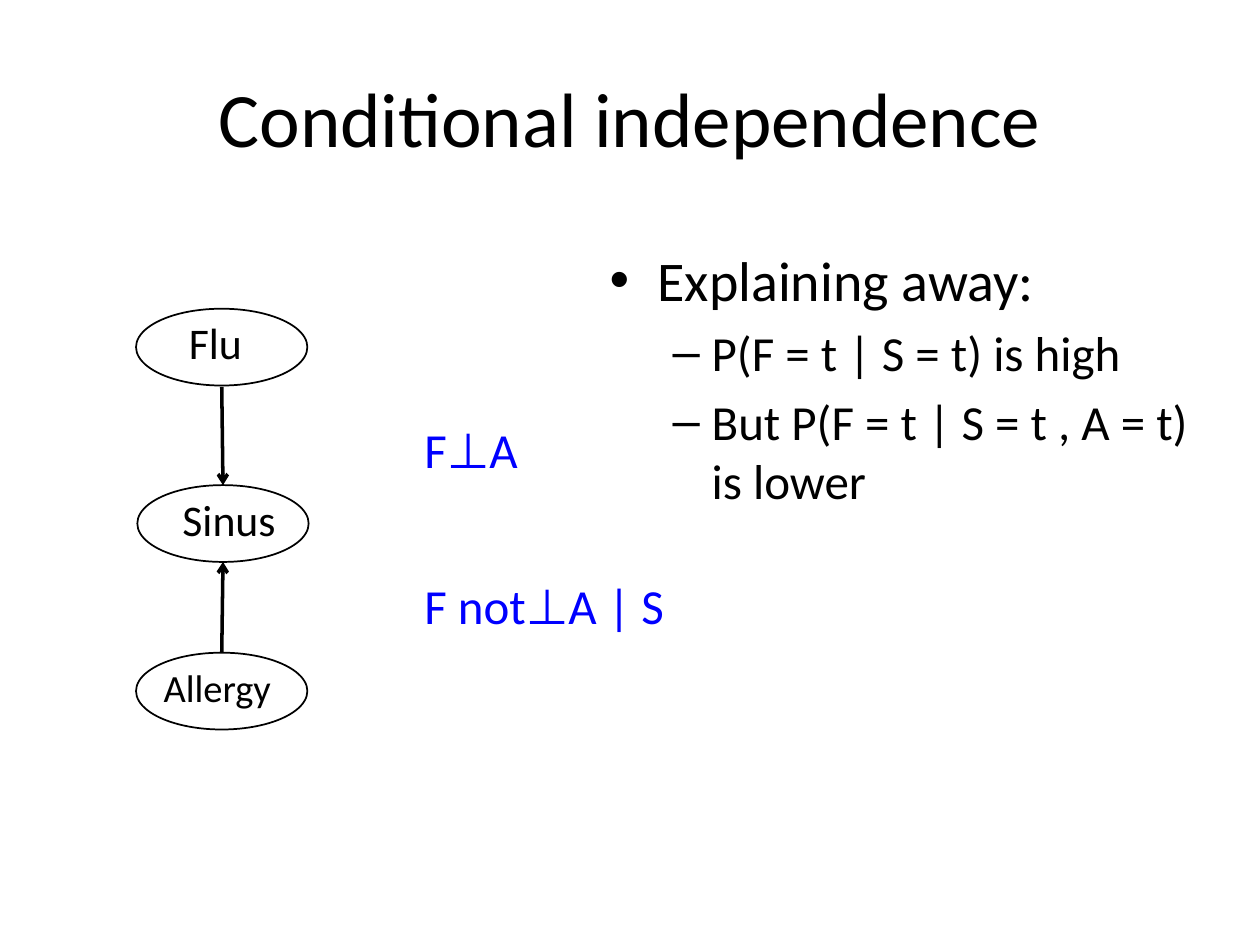
from lxml import etree
from pptx import Presentation
from pptx.dml.color import RGBColor
from pptx.enum.shapes import MSO_CONNECTOR, MSO_SHAPE
from pptx.enum.text import MSO_ANCHOR, MSO_AUTO_SIZE, PP_ALIGN
from pptx.oxml.ns import qn
from pptx.util import Inches, Pt

BLACK = "000000"
BLUE = "0000FF"


def color(hex_string):
    return RGBColor.from_string(hex_string)


class SlideBuilder:
    font = "Calibri"
    node_width, node_height = 1.36, 0.61

    def __init__(self, slide):
        self.slide = slide

    def add_run(self, paragraph, text, size, hex_string=BLACK):
        run = paragraph.add_run()
        run.text = text
        run.font.name = self.font
        run.font.size = Pt(size)
        run.font.color.rgb = color(hex_string)

    def title(self, text, left, top, width, height):
        title = self.slide.shapes.title
        title.left, title.top = Inches(left), Inches(top)
        title.width, title.height = Inches(width), Inches(height)
        title.text_frame.vertical_anchor = MSO_ANCHOR.MIDDLE
        paragraph = title.text_frame.paragraphs[0]
        paragraph.alignment = PP_ALIGN.CENTER
        self.add_run(paragraph, text, 44)

    def label(self, text, box, size, hex_string=BLACK, wrap=True, shapes=None):
        shapes = self.slide.shapes if shapes is None else shapes
        frame = shapes.add_textbox(*map(Inches, box)).text_frame
        frame.word_wrap = wrap
        frame.auto_size = MSO_AUTO_SIZE.SHAPE_TO_FIT_TEXT
        self.add_run(frame.paragraphs[0], text, size, hex_string)

    def node(self, text, left, top, label_box, size):
        """Group an outlined ellipse with its label."""
        shapes = self.slide.shapes.add_group_shape().shapes
        ellipse = shapes.add_shape(
            MSO_SHAPE.OVAL, Inches(left), Inches(top),
            Inches(self.node_width), Inches(self.node_height))
        ellipse.shadow.inherit = False
        ellipse.fill.background()
        ellipse.line.color.rgb = color(BLACK)
        ellipse.line.width = Pt(1)
        self.label(text, label_box, size, shapes=shapes)

    def arrow(self, start, end):
        connector = self.slide.shapes.add_connector(
            MSO_CONNECTOR.STRAIGHT, *map(Inches, (*start, *end)))
        connector.line.color.rgb = color(BLACK)
        connector.line.width = Pt(2)
        line = connector.line._get_or_add_ln()
        etree.SubElement(line, qn("a:tailEnd"), type="arrow")
        etree.SubElement(connector._element.spPr, qn("a:effectLst"))

    def bullets(self, items, box):
        """Add (level, text) items, each level with its own bullet style."""
        styles = [("•", 32, 0.38, 0.38), ("–", 28, 0.81, 0.31)]
        frame = self.slide.shapes.add_textbox(*map(Inches, box)).text_frame
        frame.word_wrap = True
        for index, (level, text) in enumerate(items):
            mark, size, margin, hanging = styles[level]
            paragraph = frame.add_paragraph() if index else frame.paragraphs[0]
            paragraph.level = level
            paragraph.space_before = Pt(size * 0.2)
            properties = paragraph._p.get_or_add_pPr()
            properties.set("marL", str(Inches(margin)))
            properties.set("indent", str(-Inches(hanging)))
            etree.SubElement(properties, qn("a:buFont"), typeface="Arial")
            etree.SubElement(properties, qn("a:buChar"), char=mark)
            self.add_run(paragraph, text, size)


def main():
    presentation = Presentation()
    presentation.slide_width = Inches(10)
    presentation.slide_height = Inches(7.5)
    title_only = presentation.slide_layouts[5]
    builder = SlideBuilder(presentation.slides.add_slide(title_only))

    builder.title("Conditional independence", 0.5, 0.3, 9, 1.25)

    builder.node("Flu", 1.08, 2.45, (1.4, 2.46, 0.87, 0.52), 25)
    builder.node("Sinus", 1.09, 3.85, (1.35, 3.86, 1.06, 0.52), 25)
    builder.node("Allergy", 1.08, 5.18, (1.2, 5.22, 1.69, 0.47), 22)
    builder.arrow((1.76, 3.07), (1.77, 3.85))
    builder.arrow((1.76, 5.18), (1.77, 4.46))

    builder.label("F⊥A", (3.27, 3.28, 1, 0.57), 28, BLUE, wrap=False)
    builder.label("F not⊥A | S", (3.27, 4.52, 2.17, 0.57), 28, BLUE, wrap=False)

    builder.bullets([
        (0, "Explaining away:"),
        (1, "P(F = t | S = t) is high"),
        (1, "But P(F = t | S = t , A = t) is lower"),
    ], (4.74, 1.9, 4.99, 4.95))

    presentation.save("out.pptx")


if __name__ == "__main__":
    main()
